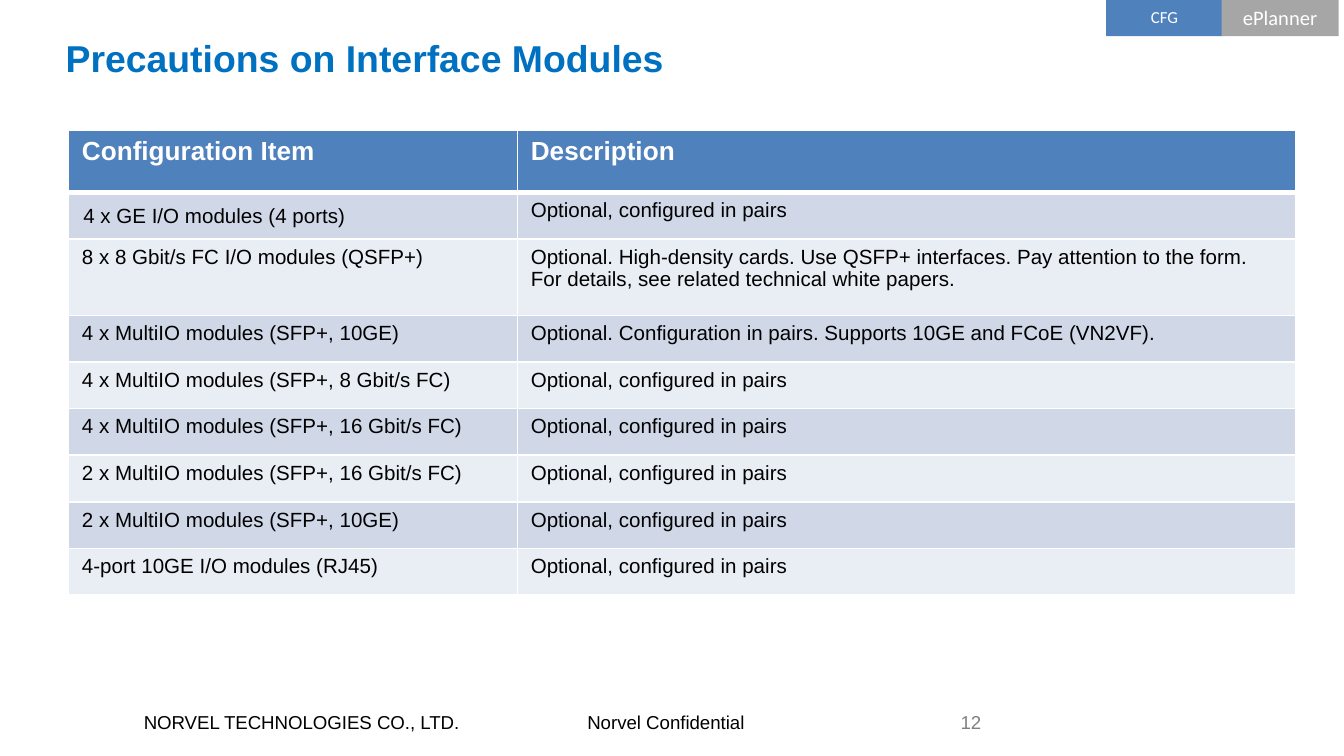
import pptx
import pptx.util
import pptx.oxml
import pptx.oxml.ns
import pptx.dml.color
import pptx.enum.text
import pptx.enum.shapes

WIDE = 10
HIGH = WIDE * 9 / 16
TITLE = "Precautions on Interface Modules"
PAIRS = "Optional, configured in pairs"
ROWS = [
    ("Configuration Item", "Description"),
    ("4 x GE I/O modules (4 ports)", PAIRS),
    ("8 x 8 Gbit/s FC I/O modules (QSFP+)",
     "Optional. High-density cards. Use QSFP+ interfaces. Pay attention to the form. "
     "For details, see related technical white papers."),
    ("4 x MultiIO modules (SFP+, 10GE)",
     "Optional. Configuration in pairs. Supports 10GE and FCoE (VN2VF)."),
    ("4 x MultiIO modules (SFP+, 8 Gbit/s FC)", PAIRS),
    ("4 x MultiIO modules (SFP+, 16 Gbit/s FC)", PAIRS),
    ("2 x MultiIO modules (SFP+, 16 Gbit/s FC)", PAIRS),
    ("2 x MultiIO modules (SFP+, 10GE)", PAIRS),
    ("4-port 10GE I/O modules (RJ45)", PAIRS),
]
COLS = (3.34, 5.79)
TALL = {0: 0.46, 2: 0.57}
TOTAL, BODY = 3.58, 3.46
ROW = (BODY - sum(TALL.values())) / (len(ROWS) - len(TALL))
HEAD, BANDS = "4F81BD", ("E9EDF4", "D0D8E8")
BADGES = [("CFG", 9, "4F81BD"), ("ePlanner", 11, "A6A6A6")]
FOOT = [
    ("12", (7.03, 5.24, 0.37, 0.27), (0.1, 0.05, 0.1, 0.05), "808080", "RIGHT"),
    ("NORVEL TECHNOLOGIES CO., LTD.", (1.07, 5.29, 2.47, 0.17), (0, 0, 0.09, 0), "000000", "LEFT"),
    ("Norvel Confidential", (4.28, 5.29, 1.46, 0.17), (0.09, 0, 0.09, 0), "000000", "LEFT"),
]
MID = pptx.enum.text.MSO_ANCHOR.MIDDLE


def inch(nums):
    return [pptx.util.Inches(num) for num in nums]


def tint(code):
    return pptx.dml.color.RGBColor.from_string(code)


def paint(item, code):
    item.fill.solid()
    item.fill.fore_color.rgb = tint(code)


def write(frame, text, size, code, face="Arial", bold=False, side="LEFT"):
    para = frame.paragraphs[0]
    para.text = text
    para.alignment = getattr(pptx.enum.text.PP_ALIGN, side)
    font = para.font
    font.name, font.size, font.bold = face, pptx.util.Pt(size), bold
    font.color.rgb = tint(code)


def label(slide, box, text, size, code, pad=(0.1, 0.05, 0.1, 0.05), wrap=False, **look):
    frame = slide.shapes.add_textbox(*inch(box)).text_frame
    frame.word_wrap = wrap
    (frame.margin_left, frame.margin_top,
     frame.margin_right, frame.margin_bottom) = inch(pad)
    write(frame, text, size, code, **look)


def edge(cell, side, width):
    space = pptx.oxml.ns.nsdecls("a")
    cell._tc.get_or_add_tcPr().append(pptx.oxml.parse_xml(
        f'<a:ln{side} {space} w="{pptx.util.Pt(width)}"><a:solidFill>'
        f'<a:srgbClr val="FFFFFF"/></a:solidFill></a:ln{side}>'))


def grid(slide):
    highs = [TALL.get(row, ROW) for row in range(len(ROWS))]
    box = inch((0.51, 0.97, sum(COLS), TOTAL))
    holder = slide.shapes.add_table(len(ROWS), len(COLS), *box)
    table = holder.table
    for col, wide in zip(table.columns, inch(COLS)):
        col.width = wide
    for row, high in zip(table.rows, inch(highs)):
        row.height = high
    holder.height = pptx.util.Inches(TOTAL)
    for row, texts in enumerate(ROWS):
        for col, text in enumerate(texts):
            cell = table.cell(row, col)
            for side in "LRTB":
                thick = (row, side) in ((0, "B"), (1, "T"))
                edge(cell, side, 3 if thick else 1)
            paint(cell, BANDS[row % 2] if row else HEAD)
            write(cell.text_frame, text, 11 if row else 14,
                  "000000" if row else "FFFFFF", bold=not row)
    first = table.cell(1, 0)
    first.vertical_anchor = MID
    (first.margin_left, first.margin_top,
     first.margin_right, first.margin_bottom) = inch((0.11, 0.01, 0.01, 0))


def badge(slide, spot, text, size, code):
    box = inch((8.23 + 0.86 * spot, -0.02, 0.87, 0.29))
    shape = slide.shapes.add_shape(pptx.enum.shapes.MSO_SHAPE.RECTANGLE, *box)
    shape.shadow.inherit = False
    shape.line.fill.background()
    paint(shape, code)
    shape.text_frame.vertical_anchor = MID
    write(shape.text_frame, text, size, "FFFFFF", face="Calibri", side="CENTER")


def main():
    """Build the slide on interface module precautions."""
    deck = pptx.Presentation()
    deck.slide_width, deck.slide_height = inch((WIDE, HIGH))
    slide = deck.slides.add_slide(deck.slide_layouts[6])
    for text, box, pad, code, side in FOOT:
        label(slide, box, text, 10, code, pad, side=side)
    grid(slide)
    label(slide, (0.39, 0.21, 8.47, 0.72), TITLE, 20, "0070C0", wrap=True, bold=True)
    for spot, item in enumerate(BADGES):
        badge(slide, spot, *item)
    deck.save("out.pptx")


if __name__ == "__main__":
    main()
